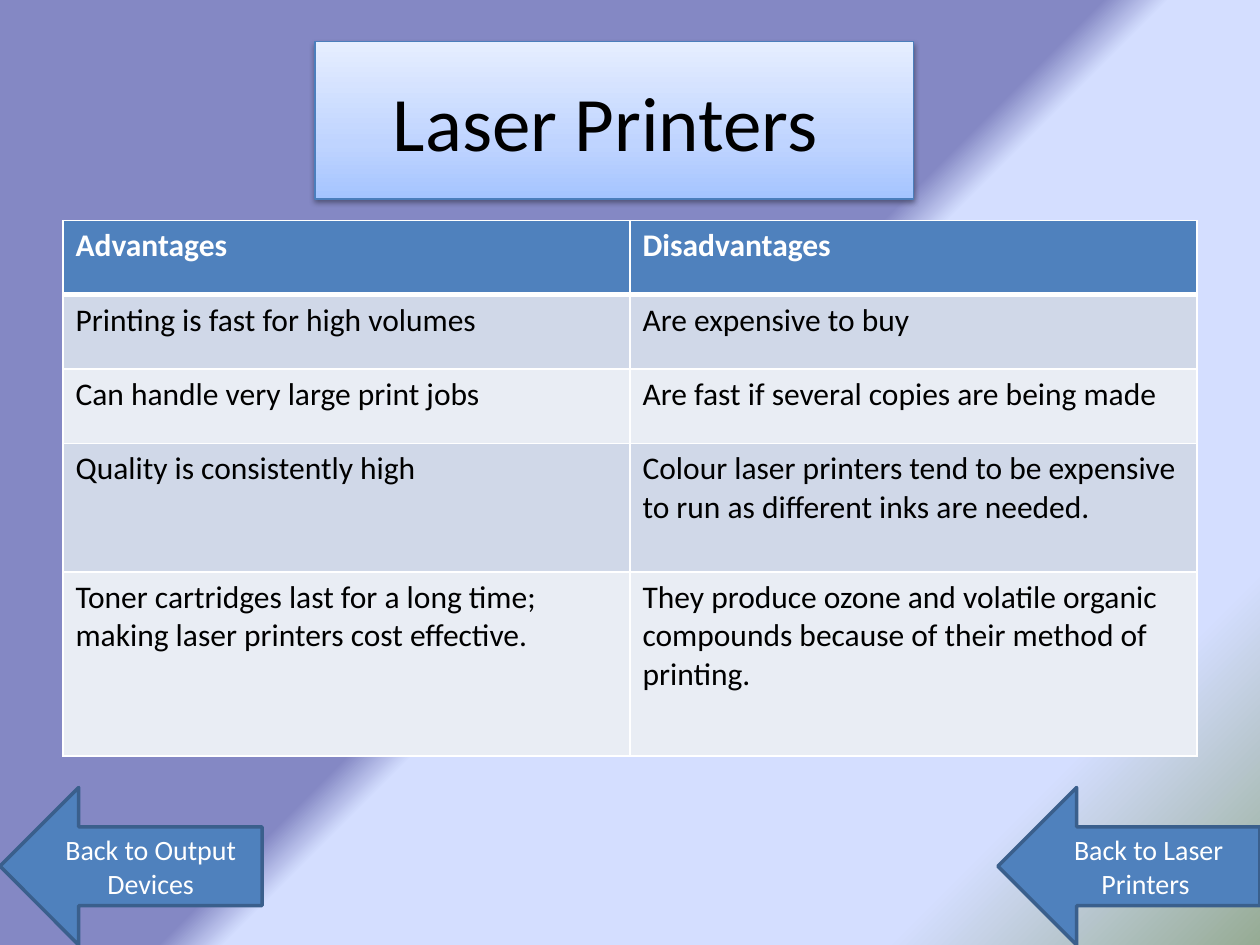
from lxml import etree
from pptx import Presentation
from pptx import util as u
from pptx.dml.color import RGBColor
from pptx.enum import shapes, text
from pptx.oxml import parse_xml
from pptx.oxml.ns import nsdecls, qn

COLOURS = {
    "white": "FFFFFF", "black": "000000",
    "blue": "4F81BD", "arrow_edge": "3A5F8C", "title_edge": "4B7EBC",
    "band_dark": "D0D8E8", "band_light": "E9EDF4",
}
BACKGROUND = [(50, "8488C4"), (53, "D4DEFF"), (83, "D4DEFF"), (100, "96AB94")]
TITLE_FILL = [(0, "A4C4FF"), (35, "BFD4FF"), (100, "E6EEFF")]
ROWS = [
    ("Advantages", "Disadvantages"),
    ("Printing is fast for high volumes", "Are expensive to buy"),
    ("Can handle very large print jobs", "Are fast if several copies are being made"),
    ("Quality is consistently high",
     "Colour laser printers tend to be expensive to run as different inks are needed."),
    ("Toner cartridges last for a long time; making laser printers cost effective.",
     "They produce ozone and volatile organic compounds because of their method of printing."),
]
ROW_HEIGHTS = [0.59, 0.59, 0.59, 1.02, 1.46]


def rgb(name):
    return RGBColor.from_string(COLOURS[name])


def fill_gradient(fill, stops, angle):
    """Fill with (percent, hex) stops; the angle runs counter-clockwise."""
    fill.gradient()
    fill.gradient_angle = angle
    stop_list = fill.gradient_stops[0]._gs.getparent()
    for old in list(stop_list):
        stop_list.remove(old)
    for percent, colour in stops:
        gs = etree.SubElement(stop_list, qn("a:gs"), pos=str(percent * 1000))
        etree.SubElement(gs, qn("a:srgbClr"), val=colour)


class Slide:
    """Holds the font and the current slide."""

    def __init__(self, s, font="Calibri"):
        self.s = s
        self.font = font

    def background(self, stops, angle):
        fill_gradient(self.s.background.fill, stops, angle)

    def set_text(self, tf, words, size, colour, bold=False, align=text.PP_ALIGN.LEFT):
        tf.word_wrap = True
        p = tf.paragraphs[0]
        p.text = words
        p.alignment = align
        p.font.name, p.font.size, p.font.bold = self.font, u.Pt(size), bold
        p.font.color.rgb = rgb(colour)

    def box(self, kind, at, words, size, colour, edge, edge_width):
        sp = self.s.shapes.add_shape(kind, *map(u.Inches, at))
        sp.shadow.inherit = False
        sp.line.color.rgb = rgb(edge)
        sp.line.width = u.Pt(edge_width)
        sp.text_frame.vertical_anchor = text.MSO_ANCHOR.MIDDLE
        self.set_text(sp.text_frame, words, size, colour, align=text.PP_ALIGN.CENTER)
        return sp

    def title(self, at, words):
        sp = self.box(shapes.MSO_SHAPE.RECTANGLE, at, words, 44, "black", "title_edge", 0.75)
        fill_gradient(sp.fill, TITLE_FILL, 90)
        sp._element.spPr.find(qn("a:effectLst")).append(parse_xml(
            f'<a:outerShdw {nsdecls("a")} blurRad="{u.Pt(3.1)}" dist="{u.Pt(1.6)}" '
            f'dir="5400000" rotWithShape="0"><a:srgbClr val="{COLOURS["black"]}">'
            '<a:alpha val="38000"/></a:srgbClr></a:outerShdw>'))

    def arrow(self, at, words):
        sp = self.box(shapes.MSO_SHAPE.LEFT_ARROW, at, words, 16, "white", "arrow_edge", 2)
        sp.fill.solid()
        sp.fill.fore_color.rgb = rgb("blue")

    def borders(self, cell, top, bottom):
        """Draw white borders; they must come before the fill in the cell."""
        tcPr = cell._tc.get_or_add_tcPr()
        widths = {"L": 1, "R": 1, "T": top, "B": bottom}
        for i, (side, width) in enumerate(widths.items()):
            tcPr.insert(i, parse_xml(
                f'<a:ln{side} {nsdecls("a")} w="{u.Pt(width)}"><a:solidFill>'
                f'<a:srgbClr val="{COLOURS["white"]}"/></a:solidFill></a:ln{side}>'))

    def table(self, at, rows, heights):
        table = self.s.shapes.add_table(len(rows), len(rows[0]), *map(u.Inches, at)).table
        for i, (row, height) in enumerate(zip(rows, heights)):
            table.rows[i].height = u.Inches(height)
            header = i == 0
            band = "blue" if header else "band_dark" if i % 2 else "band_light"
            for j, words in enumerate(row):
                cell = table.cell(i, j)
                cell.fill.solid()
                cell.fill.fore_color.rgb = rgb(band)
                self.borders(cell, top=3 if i == 1 else 1, bottom=3 if header else 1)
                self.set_text(cell.text_frame, words, 18, "white" if header else "black", header)


def main():
    prs = Presentation()
    prs.slide_width, prs.slide_height = u.Inches(10), u.Inches(7.5)
    slide = Slide(prs.slides.add_slide(prs.slide_layouts[6]))
    slide.background(BACKGROUND, 315)
    slide.title((2.5, 0.33, 4.75, 1.25), "Laser Printers ")
    slide.table((0.5, 1.75, 9, 4.25), ROWS, ROW_HEIGHTS)
    for left, words in ((0, "Back to Output Devices"), (7.92, "Back to Laser Printers ")):
        slide.arrow((left, 6.25, 2.08, 1.25), words)
    prs.save("out.pptx")


if __name__ == "__main__":
    main()
